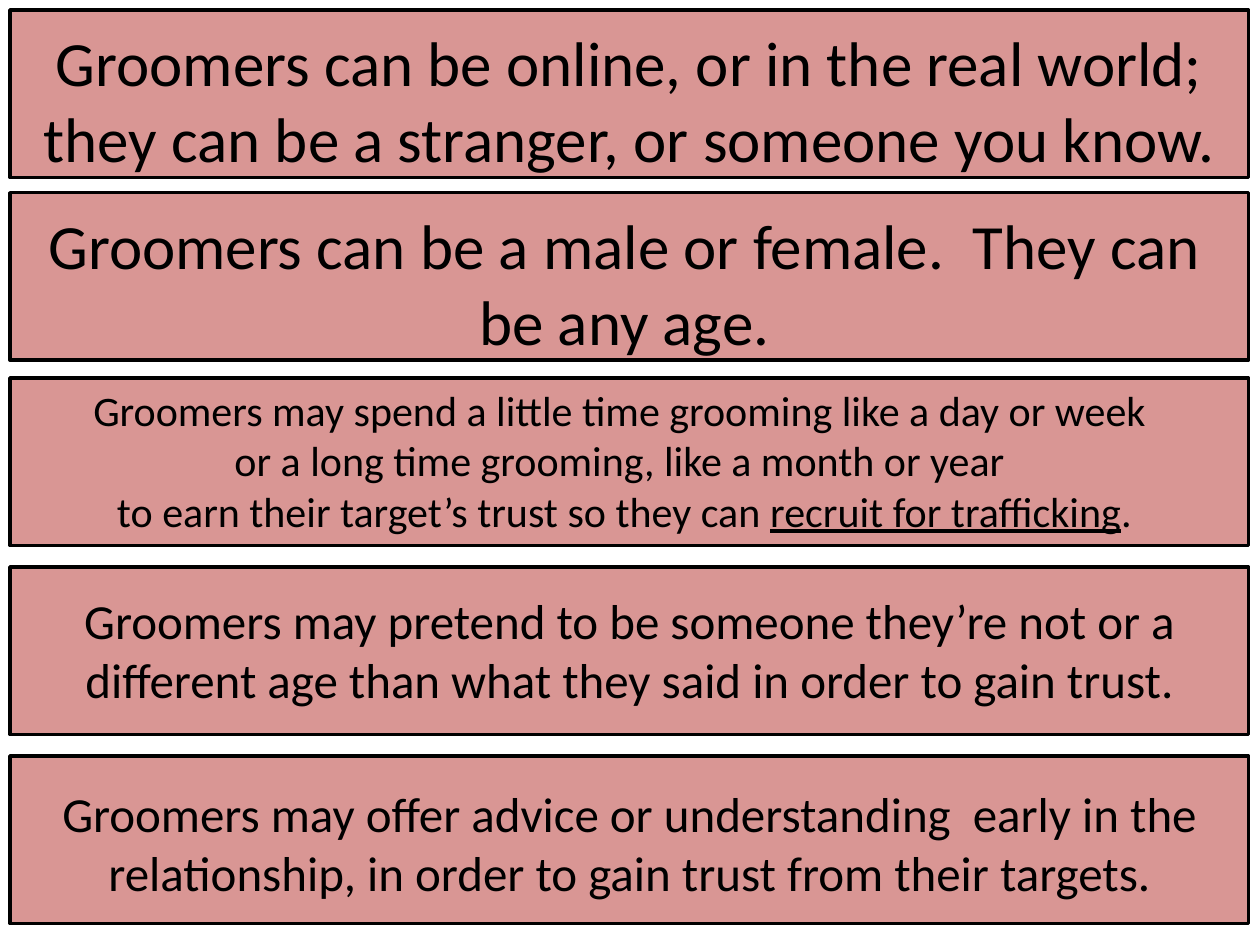
import pptx
import pptx.dml.color
import pptx.enum.shapes
import pptx.enum.text
import pptx.util
from pptx.util import Inches

COLORS = {"panel": "D99694", "ink": "000000"}
FONT = "Calibri"

PANEL_LEFT, PANEL_WIDTH, PANEL_HEIGHT = 0.08, 9.83, 1.33
PANEL_TOPS = [0.08, 1.53, 3, 4.5, 6]

# Each fact: (left, top, width, height), font size, paragraphs of (text, underlined) runs
FACTS = [
    ((0.08, 0.14, 9.83, 1.31), 36, [
        [("Groomers can be online, or in the real world; "
          "they can be a stranger, or someone you know.", False)]]),
    ((0.08, 1.59, 9.75, 1.31), 36, [
        [("Groomers can be a male or female.  They can be any age.", False)]]),
    ((0.08, 3, 9.75, 1.31), 24, [
        [("Groomers may spend a little time grooming like a day or week ", False)],
        [("or a long time grooming, like a month or year ", False)],
        [("to earn their target’s trust so they can ", False),
         ("recruit for trafficking", True), (".", False)]]),
    ((0.12, 4.64, 9.75, 1.04), 28, [
        [("Groomers may pretend to be someone they’re not or a different age "
          "than what they said in order to gain trust.", False)]]),
    ((0.12, 6.17, 9.75, 1.04), 28, [
        [("Groomers may offer advice or understanding  early in the relationship, "
          "in order to gain trust from their targets.", False)]]),
]


def color(name):
    return pptx.dml.color.RGBColor.from_string(COLORS[name])


def add_panel(slide, top):
    panel = slide.shapes.add_shape(
        pptx.enum.shapes.MSO_SHAPE.RECTANGLE, Inches(PANEL_LEFT), Inches(top),
        Inches(PANEL_WIDTH), Inches(PANEL_HEIGHT))
    panel.shadow.inherit = False
    panel.fill.solid()
    panel.fill.fore_color.rgb = color("panel")
    panel.line.color.rgb = color("ink")
    panel.line.width = pptx.util.Pt(2)


def add_fact(slide, bounds, size, paragraphs):
    fact = slide.shapes.add_textbox(*map(Inches, bounds))
    frame = fact.text_frame
    frame.word_wrap = True
    frame.auto_size = pptx.enum.text.MSO_AUTO_SIZE.SHAPE_TO_FIT_TEXT
    for index, runs in enumerate(paragraphs):
        paragraph = frame.add_paragraph() if index else frame.paragraphs[0]
        paragraph.alignment = pptx.enum.text.PP_ALIGN.CENTER
        for text, underlined in runs:
            run = paragraph.add_run()
            run.text = text
            run.font.name = FONT
            run.font.size = pptx.util.Pt(size)
            run.font.color.rgb = color("ink")
            if underlined:
                run.font.underline = True


def main():
    presentation = pptx.Presentation()
    presentation.slide_width = Inches(10)
    presentation.slide_height = Inches(7.5)
    slide = presentation.slides.add_slide(presentation.slide_layouts[6])
    for top in PANEL_TOPS:
        add_panel(slide, top)
    for bounds, size, paragraphs in FACTS:
        add_fact(slide, bounds, size, paragraphs)
    presentation.save("out.pptx")


if __name__ == "__main__":
    main()
